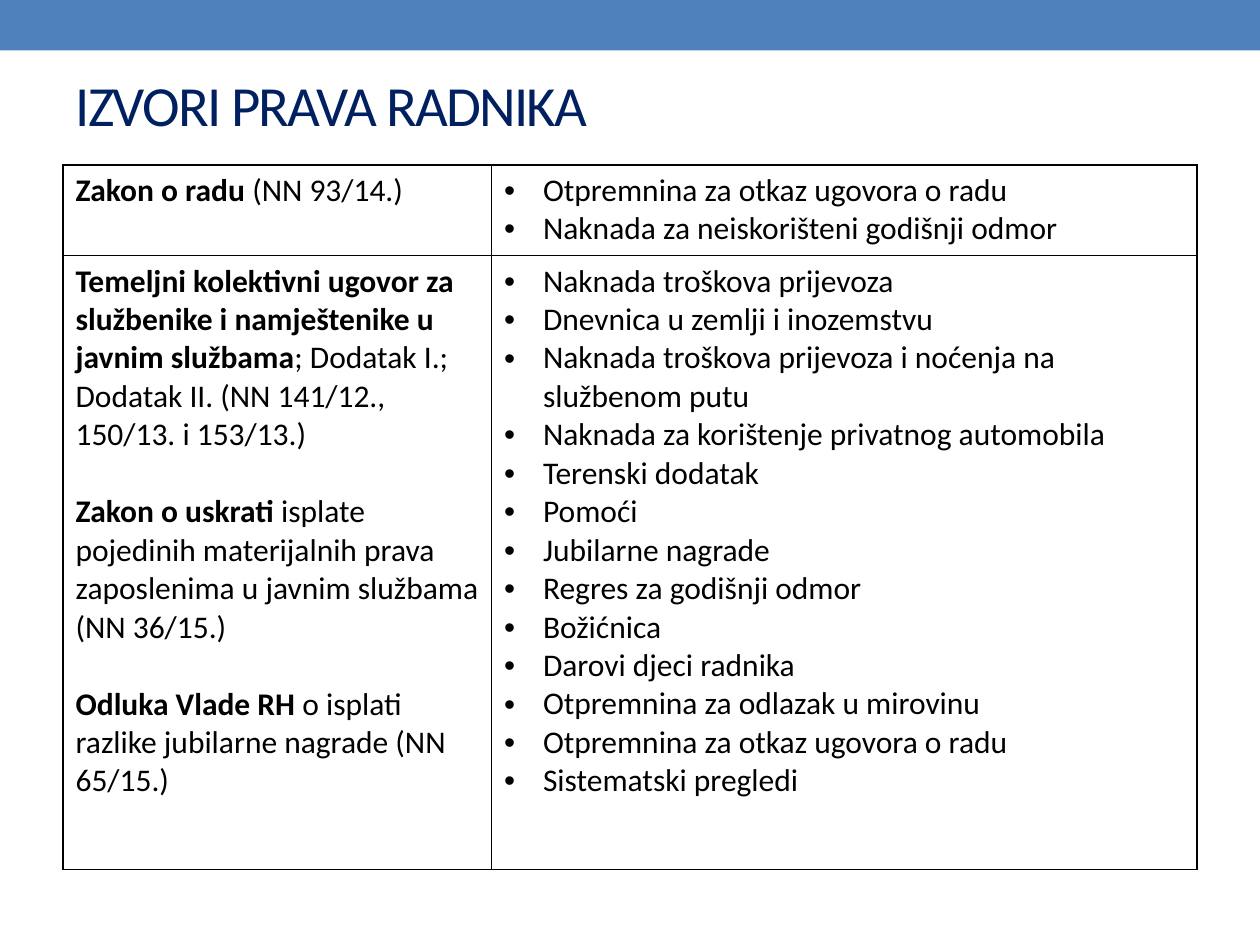
from dataclasses import dataclass

from lxml.etree import SubElement
from pptx import Presentation
from pptx.dml.color import RGBColor
from pptx.enum.shapes import MSO_SHAPE
from pptx.enum.text import MSO_ANCHOR, MSO_AUTO_SIZE, PP_ALIGN
from pptx.oxml.ns import qn
from pptx.util import Inches, Pt


@dataclass(frozen=True)
class Theme:
    font: str = "Calibri"
    bar: str = "4F81BD"
    title: str = "002060"
    text: str = "000000"
    paper: str = "FFFFFF"
    title_size: float = 32.4
    body_size: float = 18
    paragraph_gap: float = 22
    border: float = 1


LABOUR_ACT = [[("Zakon o radu ", True), ("(NN 93/14.)", False)]]
LABOUR_RIGHTS = [
    "Otpremnina za otkaz ugovora o radu",
    "Naknada za neiskorišteni godišnji odmor",
]
PUBLIC_SERVICE_ACTS = [
    [
        ("Temeljni kolektivni ugovor za službenike i namještenike u javnim službama", True),
        ("; Dodatak I.; Dodatak II. (NN 141/12., 150/13. i 153/13.)", False),
    ],
    [
        ("Zakon o uskrati", True),
        (" isplate pojedinih materijalnih prava zaposlenima u javnim službama (NN 36/15.)", False),
    ],
    [
        ("Odluka Vlade RH ", True),
        ("o isplati razlike jubilarne nagrade (NN 65/15.)", False),
    ],
]
PUBLIC_SERVICE_RIGHTS = [
    "Naknada troškova prijevoza",
    "Dnevnica u zemlji i inozemstvu",
    "Naknada troškova prijevoza i noćenja na službenom putu",
    "Naknada za korištenje privatnog automobila",
    "Terenski dodatak",
    "Pomoći",
    "Jubilarne nagrade",
    "Regres za godišnji odmor",
    "Božićnica",
    "Darovi djeci radnika",
    "Otpremnina za odlazak u mirovinu",
    "Otpremnina za otkaz ugovora o radu",
    "Sistematski pregledi",
]


def add_text(para, text, font, size, color, bold=False, spacing=None):
    span = para.add_run()
    span.text = text
    span.font.name = font
    span.font.size = Pt(size)
    span.font.bold = bold
    span.font.color.rgb = RGBColor.from_string(color)
    if spacing is not None:
        span.font._element.set("spc", str(int(spacing * 100)))


class SlideBuilder:
    def __init__(self, page, theme):
        self.page = page
        self.theme = theme

    def bar(self, left, top, width, height):
        box = self.page.shapes.add_shape(
            MSO_SHAPE.RECTANGLE, Inches(left), Inches(top), Inches(width), Inches(height)
        )
        box.shadow.inherit = False
        box.fill.solid()
        box.fill.fore_color.rgb = RGBColor.from_string(self.theme.bar)
        box.line.fill.background()

    def title(self, text, left, top, width, height):
        box = self.page.shapes.title
        box.left, box.top = Inches(left), Inches(top)
        box.width, box.height = Inches(width), Inches(height)
        frame = box.text_frame
        frame.auto_size = MSO_AUTO_SIZE.NONE
        frame.word_wrap = True
        frame.vertical_anchor = MSO_ANCHOR.MIDDLE
        para = frame.paragraphs[0]
        para.alignment = PP_ALIGN.LEFT
        add_text(para, text, font=self.theme.font, size=self.theme.title_size,
                 color=self.theme.title, spacing=-1)

    def table(self, rows, left, top, widths, heights):
        frame = self.page.shapes.add_table(
            len(heights), len(widths), Inches(left), Inches(top),
            Inches(sum(widths)), Inches(sum(heights)),
        )
        table = frame.table
        table.first_row = False
        table.horz_banding = False
        for column, width in zip(table.columns, widths):
            column.width = Inches(width)
        for row, height, (sources, rights) in zip(table.rows, heights, rows):
            row.height = Inches(height)
            source_cell, rights_cell = row.cells
            self.cell_style(source_cell)
            self.cell_style(rights_cell)
            self.sources(source_cell.text_frame, sources)
            self.rights(rights_cell.text_frame, rights)

    def cell_style(self, cell):
        properties = cell._tc.get_or_add_tcPr()
        for side in ("a:lnL", "a:lnR", "a:lnT", "a:lnB"):
            line = SubElement(properties, qn(side), w=str(Pt(self.theme.border)))
            fill = SubElement(line, qn("a:solidFill"))
            SubElement(fill, qn("a:srgbClr"), val=self.theme.text)
        cell.fill.solid()
        cell.fill.fore_color.rgb = RGBColor.from_string(self.theme.paper)

    def body_text(self, para, text, bold=False):
        add_text(para, text, font=self.theme.font, size=self.theme.body_size,
                 color=self.theme.text, bold=bold)

    def sources(self, frame, sources):
        for index, parts in enumerate(sources):
            para = frame.add_paragraph() if index else frame.paragraphs[0]
            if index:
                para.space_before = Pt(self.theme.paragraph_gap)
            for text, bold in parts:
                self.body_text(para, text, bold)

    def rights(self, frame, rights):
        for index, text in enumerate(rights):
            para = frame.add_paragraph() if index else frame.paragraphs[0]
            properties = para._p.get_or_add_pPr()
            properties.set("marL", str(Inches(0.31)))
            properties.set("indent", str(Inches(-0.31)))
            SubElement(properties, qn("a:buFont"), typeface="Arial")
            SubElement(properties, qn("a:buChar"), char="•")
            self.body_text(para, text)


def main():
    deck = Presentation()
    deck.slide_width, deck.slide_height = Inches(10), Inches(7.5)
    page = deck.slides.add_slide(deck.slide_layouts.get_by_name("Title Only"))
    builder = SlideBuilder(page, Theme())
    builder.bar(0, 0, 10, 0.4)
    builder.title("IZVORI PRAVA RADNIKA", 0.5, 0.58, 9, 0.49)
    builder.table(
        [(LABOUR_ACT, LABOUR_RIGHTS), (PUBLIC_SERVICE_ACTS, PUBLIC_SERVICE_RIGHTS)],
        0.5, 1.31, widths=(3.4, 5.6), heights=(0.72, 4.87),
    )
    deck.save("out.pptx")


if __name__ == "__main__":
    main()
